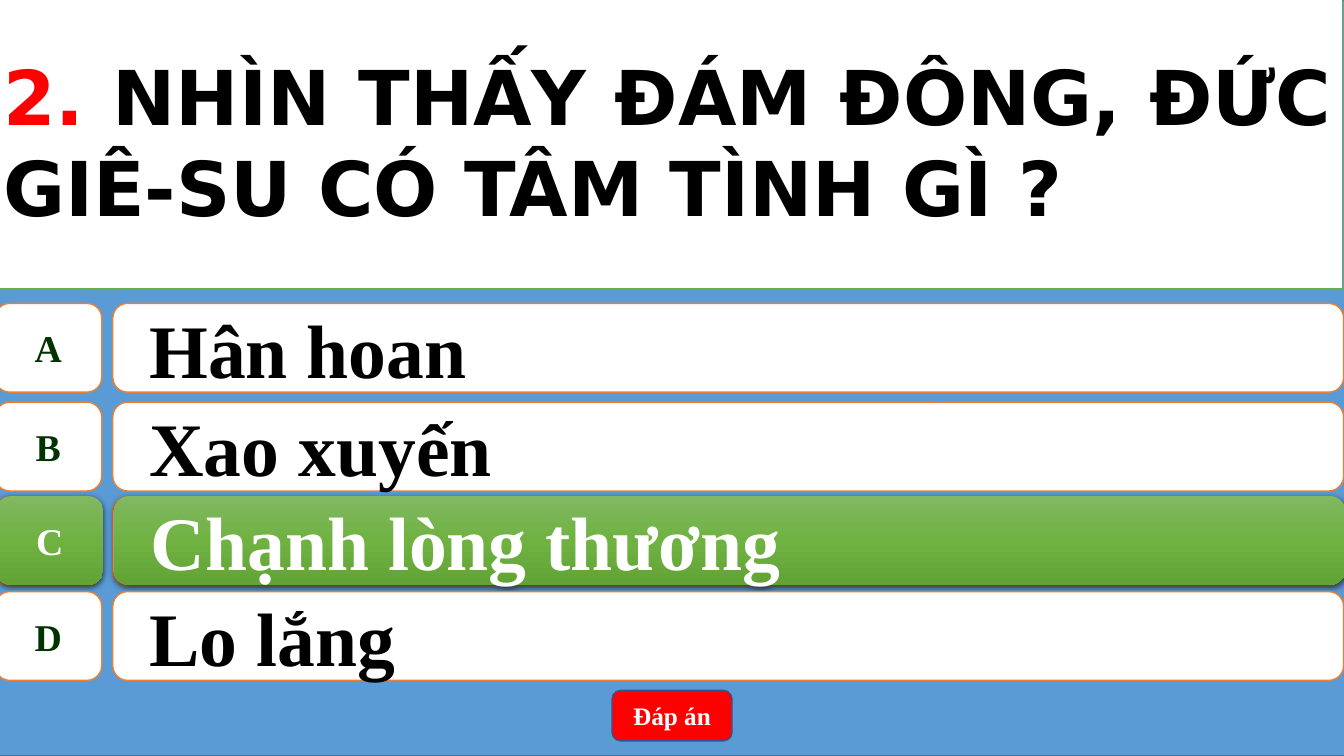
from copy import deepcopy
from dataclasses import dataclass

from lxml import etree
from pptx import Presentation
from pptx.dml.color import RGBColor
from pptx.enum.shapes import MSO_SHAPE
from pptx.enum.text import MSO_ANCHOR, MSO_AUTO_SIZE, PP_ALIGN
from pptx.oxml.ns import qn
from pptx.util import Pt

RECTANGLE = MSO_SHAPE.RECTANGLE
ROUNDED = MSO_SHAPE.ROUNDED_RECTANGLE
LETTER_SHAPE = MSO_SHAPE.FLOWCHART_ALTERNATE_PROCESS
LEFT, CENTER, JUSTIFY = PP_ALIGN.LEFT, PP_ALIGN.CENTER, PP_ALIGN.JUSTIFY
MIDDLE = MSO_ANCHOR.MIDDLE


@dataclass(frozen=True)
class Theme:
    title_font: str = "DejaVu Sans"
    body_font: str = "Times New Roman"
    large: float = 54
    letter: float = 27
    button: float = 18
    white: str = "FFFFFF"
    black: str = "000000"
    red: str = "FF0000"
    blue: str = "5B9BD5"
    blue_line: str = "43739E"
    button_line: str = "325491"
    orange: str = "ED7D31"
    green_line: str = "70AD47"
    dark_green: str = "003300"
    correct: tuple = ("81B861", "6FB242", "62A336")


THEME = Theme()
ANSWERS = [("A", "Hân hoan", 216.7), ("B", "Xao xuyến", 287.3),
           ("C", "Chạnh lòng thương", 355), ("D", "Lo lắng", 422.6)]
CORRECT = "C"
ROW_LEFT, ROW_WIDTH, ROW_HEIGHT = -3.6, 963.4, 63.4


def color(code):
    return RGBColor.from_string(code)


def paint(shape, fill, line):
    shape.fill.solid()
    shape.fill.fore_color.rgb = color(fill)
    shape.line.color.rgb = color(line)
    shape.line.width = Pt(1)


def add_panel(page, kind, box, fill, line):
    shape = page.shapes.add_shape(kind, *map(Pt, box))
    shape.shadow.inherit = False
    paint(shape, fill, line)
    return shape


def style_span(span, font, size, code):
    span.font.name, span.font.size, span.font.bold = font, Pt(size), True
    span.font.color.rgb = color(code)


def write(shape, text, size, code, align=CENTER):
    frame = shape.text_frame
    frame.text = text
    frame.vertical_anchor = MIDDLE
    para = frame.paragraphs[0]
    para.alignment = align
    style_span(para.runs[0], THEME.body_font, size, code)
    return para


def highlight(shape):
    """Give the shape the green gradient and soft shadow of the correct answer."""
    shape.line.fill.background()
    shape.fill.gradient()
    shape.fill.gradient_angle = 270
    properties = shape._element.spPr
    stops = properties.find(".//" + qn("a:gsLst"))
    stops.insert(1, deepcopy(stops[0]))
    for index, stop in enumerate(shape.fill.gradient_stops):
        stop.position = index / 2
        stop.color.rgb = color(THEME.correct[index])
    effects = properties.find(qn("a:effectLst"))
    shadow = etree.SubElement(effects, qn("a:outerShdw"), blurRad=str(Pt(4.5)),
                              dist=str(Pt(1.5)), dir="5400000", rotWithShape="0")
    tint = etree.SubElement(shadow, qn("a:srgbClr"), val=THEME.black)
    etree.SubElement(tint, qn("a:alpha"), val="63000")


def add_row_panels(page, box):
    """Draw the letter panel and the answer panel of one row."""
    left, top, width, height = box
    letter = add_panel(page, LETTER_SHAPE, (left, top, 76.3, height),
                       THEME.white, THEME.orange)
    answer = add_panel(page, ROUNDED, (left + 84.2, top, width - 84.2, height),
                       THEME.white, THEME.orange)
    return letter, answer


def add_answer(page, box, letter_text, answer_text, correct):
    if correct:
        add_row_panels(page, box)
        left, top, width, height = box
        box = left + 1, top - 0.7, width, height
    letter, answer = add_row_panels(page, box)
    if correct:
        highlight(letter)
        highlight(answer)
    write(letter, letter_text, THEME.letter,
          THEME.white if correct else THEME.dark_green)
    letter.text_frame.word_wrap = False
    para = write(answer, answer_text, THEME.large,
                 THEME.white if correct else THEME.black, LEFT)
    para.level = 1
    indents = para._p.get_or_add_pPr()
    indents.set("marL", str(Pt(36)))
    indents.set("indent", str(Pt(-20)))


def add_button(page, box):
    button = add_panel(page, ROUNDED, box, THEME.red, THEME.button_line)
    write(button, "Đáp án", THEME.button, THEME.white)


def place_question(page, box):
    title = page.shapes.title
    title.left, title.top, title.width, title.height = map(Pt, box)
    paint(title, THEME.white, THEME.green_line)
    frame = title.text_frame
    frame.auto_size = MSO_AUTO_SIZE.NONE
    frame.word_wrap = True
    frame.vertical_anchor = MIDDLE
    para = frame.paragraphs[0]
    para.alignment = JUSTIFY
    for text, code in (("2. ", THEME.red),
                       ("NHÌN THẤY ĐÁM ĐÔNG, ĐỨC GIÊ-SU CÓ TÂM TÌNH GÌ ?", THEME.black)):
        span = para.add_run()
        span.text = text
        style_span(span, THEME.title_font, THEME.large, code)
    page.shapes._spTree.append(title._element)  # in front of the blue panel


def build_quiz(page, box):
    left, top, width, height = box
    add_panel(page, RECTANGLE, (left - 3.6, top, width + 4, height),
              THEME.blue, THEME.blue_line)
    for letter, answer, offset in ANSWERS:
        row = left + ROW_LEFT, top + offset, ROW_WIDTH, ROW_HEIGHT
        add_answer(page, row, letter, answer, letter == CORRECT)
    add_button(page, (left + 437.2, top + 493.2, 85.7, 36))
    place_question(page, (left - 5, top - 5, width + 4, 211))


def main():
    deck = Presentation()
    deck.slide_width, deck.slide_height = Pt(960), Pt(540)
    page = deck.slides.add_slide(deck.slide_layouts.get_by_name("Title Only"))
    build_quiz(page, (0, 0, 960, 540))
    deck.save("out.pptx")


if __name__ == "__main__":
    main()
